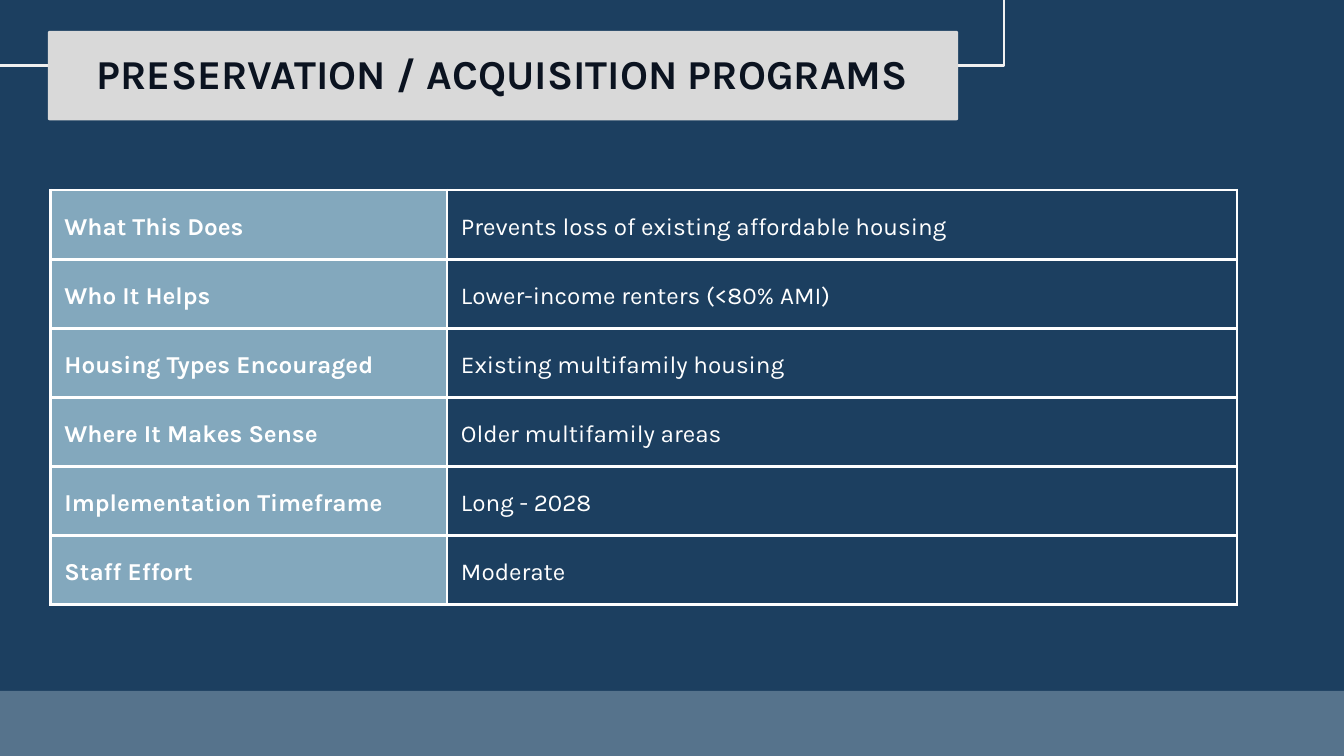
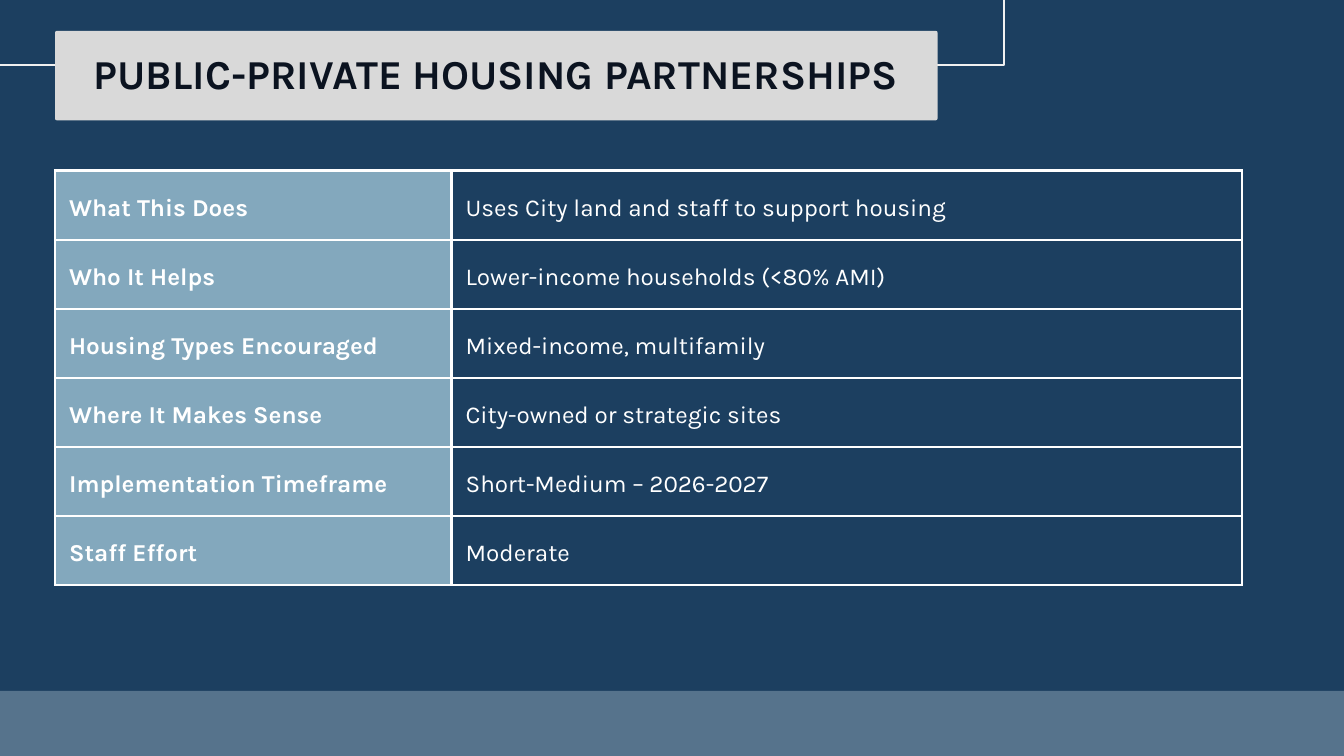
import dataclasses

import lxml.etree
import pptx
import pptx.dml.color
import pptx.enum.shapes
import pptx.enum.text
import pptx.oxml.ns
import pptx.util

Pt = pptx.util.Pt
SHAPES = pptx.enum.shapes.MSO_SHAPE


@dataclasses.dataclass(frozen=True)
class Theme:
    background: str = "1C3F60"
    frame: str = "F0F0F0"
    footer: str = "AFC1D0"
    plate: str = "D9D9D9"
    title: str = "0B1320"
    label_fill: str = "83A8BD"
    table_text: str = "FFFFFF"
    border: str = "FFFFFF"
    font: str = "Karla"
    title_size: float = 44
    title_leading: float = 45
    table_size: float = 26
    table_leading: float = 36.4
    line_width: float = 3
    footer_opacity: int = 40


@dataclasses.dataclass(frozen=True)
class Box:
    left: float
    top: float
    width: float
    height: float

    def lengths(self):
        return [Pt(value) for value in dataclasses.astuple(self)]


THEME = Theme()
SLIDE_WIDTH, SLIDE_HEIGHT = 1440, 810
FOOTER = Box(-2.9, 740.2, 1442.9, 69.8)
FRAME_LEFT, FRAME_WIDTH, FRAME_BOTTOM = -18, 1093.7, 69.8
LABEL_WIDTH = 424.8
CELL_MARGIN = 15.1

LABELS = ["What This Does", "Who It Helps", "Housing Types Encouraged",
          "Where It Makes Sense", "Implementation Timeframe", "Staff Effort"]

PROGRAMS = [
    {
        "title": "PRESERVATION / ACQUISITION PROGRAMS",
        "frame_top": -22.3,
        "plate": Box(51.2, 33.1, 975.5, 95.8),
        "table": Box(54, 203.8, 1271.5, 444.2),
        "values": ["Prevents loss of existing affordable housing",
                   "Lower-income renters (<80% AMI)",
                   "Existing multifamily housing",
                   "Older multifamily areas",
                   "Long - 2028",
                   "Moderate"],
    },
    {
        "title": "PUBLIC-PRIVATE HOUSING PARTNERSHIPS",
        "frame_top": -9.4,
        "plate": Box(59, 33.1, 945.5, 95.8),
        "table": Box(59, 182.9, 1271.5, 444.2),
        "values": ["Uses City land and staff to support housing",
                   "Lower-income households (<80% AMI)",
                   "Mixed-income, multifamily",
                   "City-owned or strategic sites",
                   "Short-Medium – 2026-2027",
                   "Moderate"],
    },
]


def rgb(color):
    return pptx.dml.color.RGBColor.from_string(color)


def set_fill(fill, color):
    fill.solid()
    fill.fore_color.rgb = rgb(color)


def add_panel(slide, box, preset=SHAPES.RECTANGLE, color=None):
    """Add a plain shape, filled when a colour is given, without an outline."""
    shape = slide.shapes.add_shape(preset, *box.lengths())
    shape.shadow.inherit = False
    shape.line.fill.background()
    if color:
        set_fill(shape.fill, color)
    else:
        shape.fill.background()
    return shape


def write(text_frame, text, size, leading, color, bold):
    text_frame.text = text
    paragraph = text_frame.paragraphs[0]
    paragraph.line_spacing = Pt(leading)
    font = paragraph.runs[0].font
    font.name, font.size, font.bold = THEME.font, Pt(size), bold
    font.color.rgb = rgb(color)
    return paragraph


def add_frame(slide, top):
    box = Box(FRAME_LEFT, top, FRAME_WIDTH, FRAME_BOTTOM - top)
    frame = add_panel(slide, box)
    set_fill(frame.line.fill, THEME.frame)
    frame.line.width = Pt(THEME.line_width)


def add_footer(slide, box):
    band = add_panel(slide, box, color=THEME.footer)
    # Make the band translucent
    color = band.fill._xPr.find(".//" + pptx.oxml.ns.qn("a:srgbClr"))
    lxml.etree.SubElement(color, pptx.oxml.ns.qn("a:alpha"),
                          val=str(THEME.footer_opacity * 1000))


def add_title(slide, box, text):
    plate = add_panel(slide, box, SHAPES.ROUNDED_RECTANGLE, THEME.plate)
    plate.adjustments[0] = 0.02
    text_box = slide.shapes.add_textbox(
        *Box(box.left, box.top + 26.7, box.width, 48.2).lengths())
    text_frame = text_box.text_frame
    text_frame.word_wrap = True
    text_frame.margin_left = text_frame.margin_right = 0
    text_frame.margin_top = text_frame.margin_bottom = 0
    paragraph = write(text_frame, text, THEME.title_size,
                      THEME.title_leading, THEME.title, True)
    paragraph.alignment = pptx.enum.text.PP_ALIGN.CENTER


def add_borders(cell):
    properties = cell._tc.get_or_add_tcPr()
    qn = pptx.oxml.ns.qn
    for side in ("lnL", "lnR", "lnT", "lnB"):
        line = lxml.etree.SubElement(properties, qn("a:" + side),
                                     w=str(Pt(THEME.line_width)))
        fill = lxml.etree.SubElement(line, qn("a:solidFill"))
        lxml.etree.SubElement(fill, qn("a:srgbClr"), val=THEME.border)


def style_cell(cell, text, is_label):
    add_borders(cell)
    if is_label:
        set_fill(cell.fill, THEME.label_fill)
    else:
        cell.fill.background()
    cell.margin_left = cell.margin_right = Pt(CELL_MARGIN)
    cell.margin_top = cell.margin_bottom = Pt(CELL_MARGIN)
    cell.vertical_anchor = pptx.enum.text.MSO_ANCHOR.MIDDLE
    write(cell.text_frame, text, THEME.table_size, THEME.table_leading,
          THEME.table_text, is_label)


def add_summary_table(slide, box, values):
    table = slide.shapes.add_table(len(LABELS), 2, *box.lengths()).table
    table.first_row = table.horz_banding = False
    table.columns[0].width = Pt(LABEL_WIDTH)
    table.columns[1].width = Pt(box.width - LABEL_WIDTH)
    for row, label, value in zip(table.rows, LABELS, values):
        row.height = Pt(box.height / len(LABELS))
        style_cell(row.cells[0], label, True)
        style_cell(row.cells[1], value, False)


def add_program_slide(presentation, program):
    slide = presentation.slides.add_slide(presentation.slide_layouts[6])
    set_fill(slide.background.fill, THEME.background)
    add_frame(slide, program["frame_top"])
    add_footer(slide, FOOTER)
    add_title(slide, program["plate"], program["title"])
    add_summary_table(slide, program["table"], program["values"])


def main():
    presentation = pptx.Presentation()
    presentation.slide_width = Pt(SLIDE_WIDTH)
    presentation.slide_height = Pt(SLIDE_HEIGHT)
    for program in PROGRAMS:
        add_program_slide(presentation, program)
    presentation.save("out.pptx")


if __name__ == "__main__":
    main()
